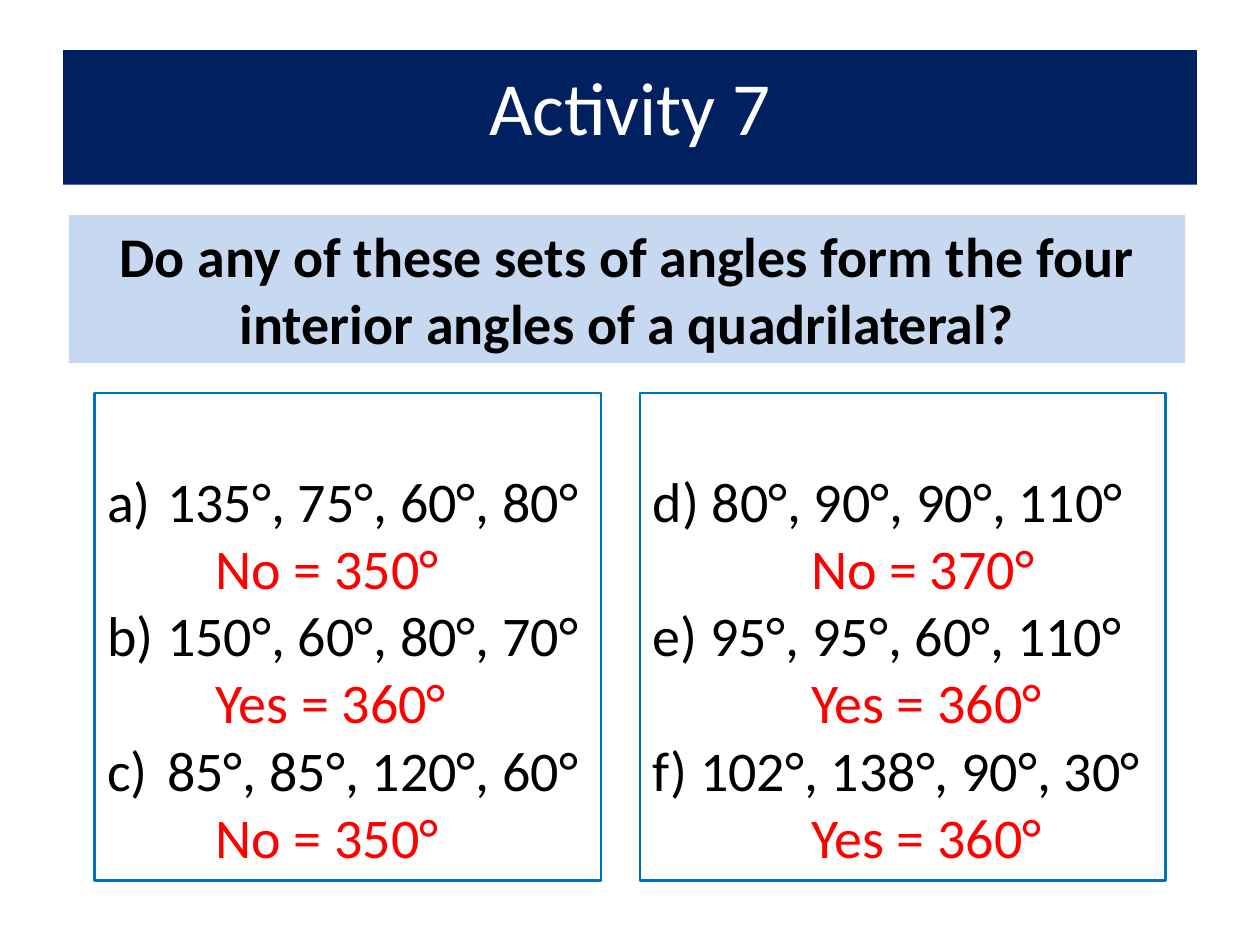
from lxml import etree
from pptx import Presentation
from pptx.dml.color import RGBColor
from pptx.enum.text import MSO_ANCHOR, MSO_AUTO_SIZE, PP_ALIGN
from pptx.oxml.ns import qn
from pptx.util import Pt

CENTER, LEFT = PP_ALIGN.CENTER, PP_ALIGN.LEFT
TOP = MSO_ANCHOR.TOP
NO_AUTOFIT = MSO_AUTO_SIZE.NONE
TWO_CONTENT_LAYOUT = 3

COLORS = {
    "navy": "002060",
    "pale blue": "C6D9F1",
    "blue": "0070C0",
    "red": "FF0000",
    "black": "000000",
    "white": "FFFFFF",
}
FONT = "Calibri"
TEXT_SIZE = 32
NUMBER_INDENT = 27

TITLE = "Activity 7"
QUESTION = ("Do any of these sets of angles form the four "
            "interior angles of a quadrilateral?")
# Angle sets, answers, automatic lettering, and left and width of box and answers
COLUMNS = [
    {
        "angles": [" 135°, 75°, 60°, 80°", " 150°, 60°, 80°, 70°", " 85°, 85°, 120°, 60°"],
        "answers": ["No = 350°", "Yes = 360°", "No = 350°"],
        "lettered": True,
        "box": (54, 289.5),
        "answer box": (116, 147.6),
    },
    {
        "angles": ["d) 80°, 90°, 90°, 110°", "e) 95°, 95°, 60°, 110°", "f) 102°, 138°, 90°, 30°"],
        "answers": ["No = 370°", "Yes = 360°", "Yes = 360°"],
        "lettered": False,
        "box": (365.75, 300.25),
        "answer box": (456.4, 157.7),
    },
]
BOX_TOP, BOX_HEIGHT = 224.6, 278.6
ANSWER_TOP, ANSWER_HEIGHT = 262.8, 239.8


def color(name):
    return RGBColor.from_string(COLORS[name])


def place(shape, left, top, width, height):
    shape.left, shape.top = Pt(left), Pt(top)
    shape.width, shape.height = Pt(width), Pt(height)


def fill_shape(shape, name):
    shape.fill.solid()
    shape.fill.fore_color.rgb = color(name)


def set_bullet(paragraph, lettered):
    """Letter the paragraph a), b), c) or remove the inherited bullet."""
    properties = paragraph._p.get_or_add_pPr()
    indent = Pt(NUMBER_INDENT) if lettered else 0
    properties.set("marL", str(indent))
    properties.set("indent", str(-indent))
    if lettered:
        etree.SubElement(properties, qn("a:buAutoNum"), type="alphaLcParenR")
    else:
        etree.SubElement(properties, qn("a:buNone"))


def write(shape, lines, color_name, size=TEXT_SIZE, bold=False,
          alignment=LEFT, spacing=1.0, lettered=False):
    frame = shape.text_frame
    frame.word_wrap = True
    frame.auto_size = NO_AUTOFIT
    frame.vertical_anchor = TOP
    for index, line in enumerate(lines):
        paragraph = frame.add_paragraph() if index else frame.paragraphs[0]
        paragraph.alignment = alignment
        paragraph.line_spacing = spacing
        paragraph.space_before = Pt(0)
        set_bullet(paragraph, lettered)
        run = paragraph.add_run()
        run.text = line
        run.font.name = FONT
        run.font.size = Pt(size)
        run.font.bold = bold
        run.font.color.rgb = color(color_name)


def main():
    presentation = Presentation()
    presentation.slide_width, presentation.slide_height = Pt(720), Pt(540)
    layout = presentation.slide_layouts[TWO_CONTENT_LAYOUT]
    slide = presentation.slides.add_slide(layout)
    title, *boxes = slide.placeholders

    question = slide.shapes.add_textbox(Pt(39.3), Pt(122.9), Pt(638), Pt(84.7))
    fill_shape(question, "pale blue")
    write(question, [QUESTION], "black", bold=True, alignment=CENTER)

    place(title, 36, 28.6, 648, 77)
    fill_shape(title, "navy")
    write(title, [TITLE], "white", size=42.9, alignment=CENTER)
    title.text_frame.margin_top = Pt(5.8)

    for column, box in zip(COLUMNS, boxes):
        left, width = column["box"]
        place(box, left, BOX_TOP, width, BOX_HEIGHT)
        box.line.color.rgb = color("blue")
        box.line.width = Pt(1.5)
        write(box, column["angles"], "black", spacing=2.0,
              lettered=column["lettered"])

        left, width = column["answer box"]
        answers = slide.shapes.add_textbox(
            Pt(left), Pt(ANSWER_TOP), Pt(width), Pt(ANSWER_HEIGHT))
        write(answers, column["answers"], "red", spacing=2.0)

    presentation.save("out.pptx")


if __name__ == "__main__":
    main()
